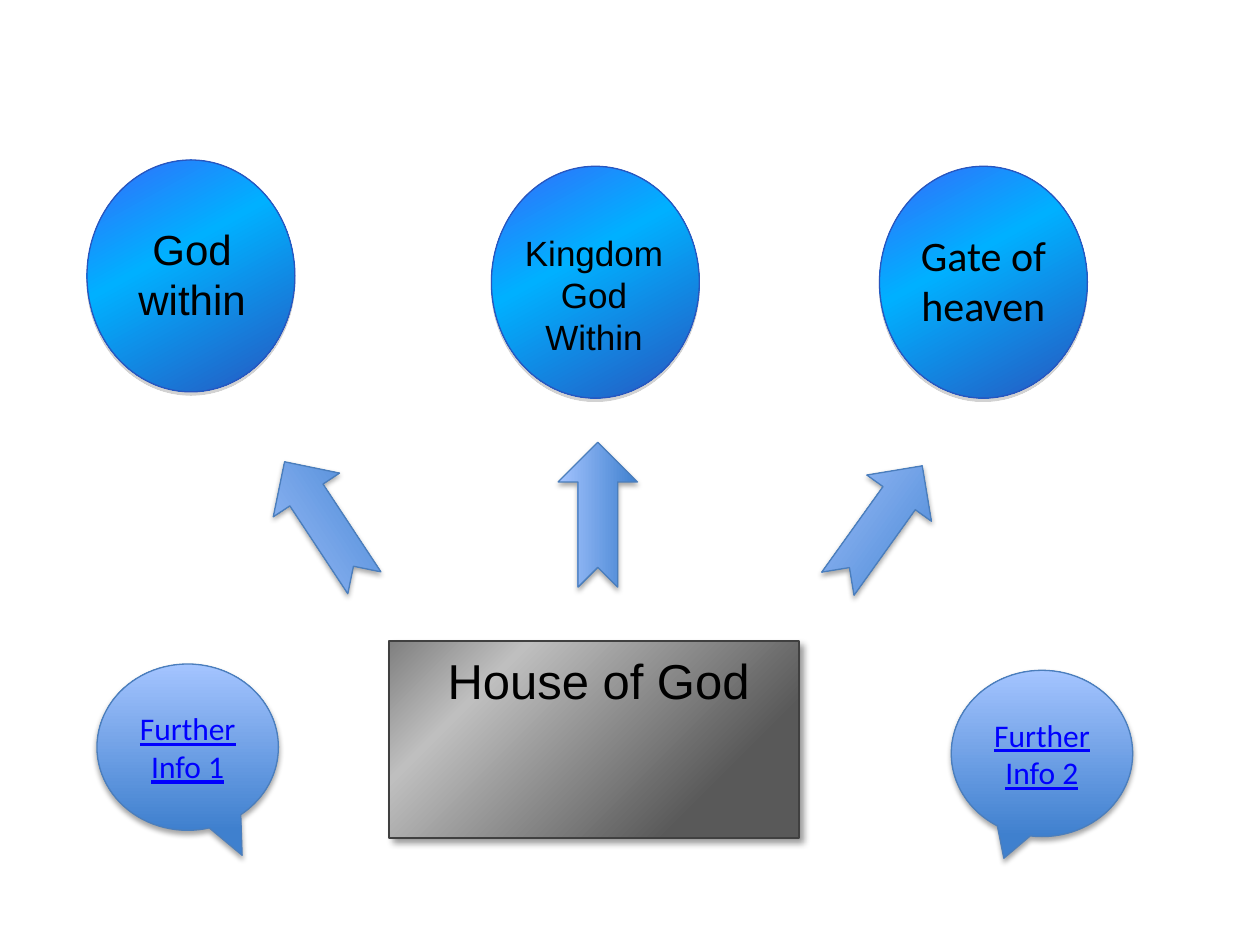
from lxml import etree
from pptx import Presentation
from pptx.dml.color import RGBColor
from pptx.enum.shapes import MSO_SHAPE
from pptx.enum.text import MSO_ANCHOR, PP_ALIGN
from pptx.oxml import parse_xml
from pptx.oxml.ns import nsdecls
from pptx.util import Inches, Pt

BLACK = RGBColor(0x00, 0x00, 0x00)
LINK_BLUE = RGBColor(0x00, 0x00, 0xFF)
DARK_GRAY = RGBColor(0x40, 0x40, 0x40)
MID_GRAY = RGBColor(0x59, 0x59, 0x59)
GRAY = RGBColor(0x80, 0x80, 0x80)
LIGHT_GRAY = RGBColor(0xBF, 0xBF, 0xBF)
BRIGHT_BLUE = RGBColor(0x33, 0x6F, 0xFA)
SKY_BLUE = RGBColor(0x00, 0xB0, 0xFF)
DEEP_BLUE = RGBColor(0x28, 0x56, 0xBF)
STEEL_BLUE = RGBColor(0x3F, 0x80, 0xCE)
PALE_BLUE = RGBColor(0xA4, 0xC4, 0xFF)
EDGE_BLUE = RGBColor(0x4B, 0x7E, 0xBC)

# Shadow values: colour, opacity %, blur pt, distance pt, direction in degrees
HOUSE_STYLE = {
    "stops": [(22, MID_GRAY), (77, LIGHT_GRAY), (100, GRAY)], "angle": 225,
    "line": (DARK_GRAY, 1), "shadow": (BLACK, 40, 4, 3, 45),
}
CIRCLE_STYLE = {
    "stops": [(0, BRIGHT_BLUE), (2, BRIGHT_BLUE), (40, SKY_BLUE), (100, DEEP_BLUE)],
    "angle": 61, "line": (DEEP_BLUE, 0.75), "shadow": (GRAY, 35, 0, 1.8, 90),
}
BLUE_STYLE = {
    "stops": [(0, STEEL_BLUE), (100, PALE_BLUE)], "angle": 270,
    "line": (EDGE_BLUE, 0.75), "shadow": (BLACK, 35, 3.1, 1.8, 90),
}


def add_styled_shape(kind, box, style):
    """Add a shape with gradient fill, outline and outer shadow."""
    shape = slide.shapes.add_shape(kind, *[Inches(value) for value in box])
    line_color, line_width = style["line"]
    shape.line.color.rgb = line_color
    shape.line.width = Pt(line_width)
    properties = shape._element.spPr
    stops = "".join(
        f'<a:gs pos="{position * 1000}"><a:srgbClr val="{color}"/></a:gs>'
        for position, color in style["stops"])
    properties.insert(2, parse_xml(
        f'<a:gradFill {nsdecls("a")} rotWithShape="1"><a:gsLst>{stops}</a:gsLst>'
        f'<a:lin ang="{style["angle"] * 60000}" scaled="0"/></a:gradFill>'))
    color, opacity, blur, distance, direction = style["shadow"]
    effects = etree.SubElement(properties, properties[0].tag.replace("xfrm", "effectLst"))
    effects.append(parse_xml(
        f'<a:outerShdw {nsdecls("a")} blurRad="{Pt(blur)}" dist="{Pt(distance)}" '
        f'dir="{direction * 60000}" rotWithShape="0"><a:srgbClr val="{color}">'
        f'<a:alpha val="{opacity * 1000}"/></a:srgbClr></a:outerShdw>'))
    return shape


def write_text(shape, text, font_format):
    """Put centred text in a shape; a vertical tab breaks the line."""
    shape.text_frame.text = text
    for paragraph in shape.text_frame.paragraphs:
        paragraph.alignment = PP_ALIGN.CENTER
        for run in paragraph.runs:
            run.font.color.rgb = font_format["color"]
            for name in ("name", "size", "underline"):
                setattr(run.font, name, font_format.get(name))


presentation = Presentation()
presentation.slide_width = Inches(10)
presentation.slide_height = Inches(7.5)
slide = presentation.slides.add_slide(presentation.slide_layouts[6])

# House and circles
add_styled_shape(MSO_SHAPE.RECTANGLE, (3.09, 5.09, 3.25, 1.56), HOUSE_STYLE)
for left, top in [(0.69, 1.27), (6.98, 1.32), (3.9, 1.32)]:
    add_styled_shape(MSO_SHAPE.OVAL, (left, top, 1.65, 1.84), CIRCLE_STYLE)

# Labels: text, box, font, size, inset, wrap
labels = [
    ("House of God", (3.16, 5.16, 3.18, 0.94), "Arial", 28, 0, True),
    ("Gate of heaven", (6.89, 1.82, 1.83, 0.81), "Calibri", 24, 0, True),
    ("God\nwithin", (0.61, 1.77, 1.83, 0.81), "Arial", 24, 0, True),
    ("Kingdom\vGod\vWithin", (4.06, 1.79, 1.31, 1.11), "Arial", 20, None, False),
]
for text, box, font_name, size, inset, wrap in labels:
    label = slide.shapes.add_textbox(*[Inches(value) for value in box])
    label.text_frame.word_wrap = wrap
    if inset is not None:
        for side in ("left", "top", "right", "bottom"):
            setattr(label.text_frame, f"margin_{side}", Inches(inset))
    write_text(label, text, {"name": font_name, "size": Pt(size), "color": BLACK})

# Speech bubbles
bubbles = [
    ("Further Info 2", 7.55, 5.32, (-0.21, 0.63)),
    ("Further Info 1", 0.77, 5.27, (0.3, 0.65)),
]
for text, left, top, tip in bubbles:
    bubble = add_styled_shape(MSO_SHAPE.OVAL_CALLOUT, (left, top, 1.44, 1.32), BLUE_STYLE)
    bubble.adjustments[0], bubble.adjustments[1] = tip
    bubble.text_frame.word_wrap = True
    bubble.text_frame.vertical_anchor = MSO_ANCHOR.MIDDLE
    write_text(bubble, text, {"name": "Calibri", "size": Pt(18),
                              "color": LINK_BLUE, "underline": True})

# Arrows from the house to the circles
for left, top, rotation in [(4.17, 3.77, 270), (2, 3.83, 236.6), (6.41, 3.85, 305.6)]:
    arrow = add_styled_shape(MSO_SHAPE.NOTCHED_RIGHT_ARROW, (left, top, 1.15, 0.63), BLUE_STYLE)
    arrow.rotation = rotation

presentation.save("out.pptx")
